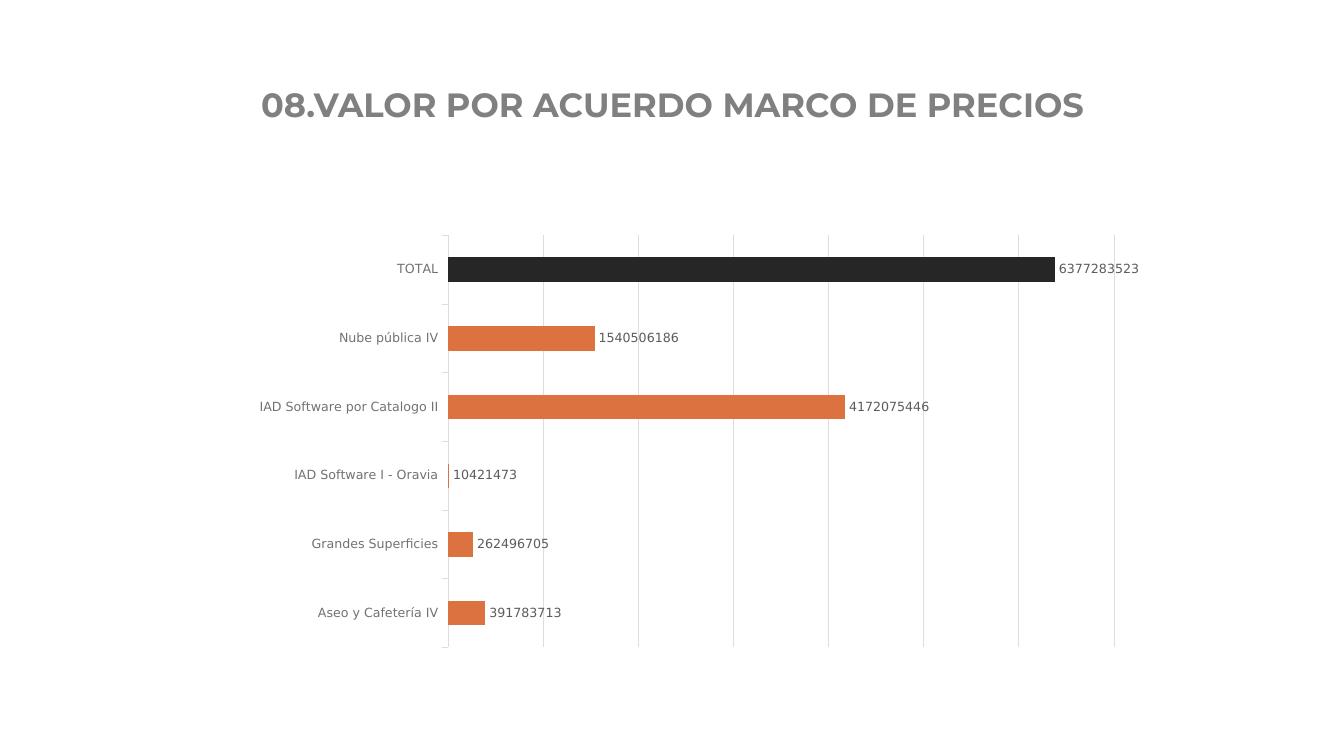
from lxml import etree
from pptx import Presentation
from pptx.chart.data import CategoryChartData
from pptx.dml.color import RGBColor
from pptx.enum import chart as ch, text
from pptx.oxml import ns
from pptx.util import Inches, Pt

TITLE_GRAY = RGBColor(0x80, 0x80, 0x80)
AXIS_GRAY = RGBColor(0x72, 0x72, 0x72)
LABEL_GRAY = RGBColor(0x5C, 0x5C, 0x5C)
GRID_GRAY = RGBColor(0xDE, 0xDE, 0xDE)
ORANGE = RGBColor(0xDC, 0x72, 0x40)
DARK = RGBColor(0x26, 0x26, 0x26)

AGREEMENTS = {
    "Aseo y Cafetería IV": 391783713,
    "Grandes Superficies": 262496705,
    "IAD Software I - Oravia": 10421473,
    "IAD Software por Catalogo II": 4172075446,
    "Nube pública IV": 1540506186,
    "TOTAL": 6377283523,
}


def set_font(font, name, size, color):
    font.name = name
    font.size = Pt(size)
    font.color.rgb = color


presentation = Presentation()
presentation.slide_width = Inches(13.33)
presentation.slide_height = Inches(7.5)
slide = presentation.slides.add_slide(presentation.slide_layouts[6])

# Title
title = slide.shapes.add_textbox(Inches(0.92), Inches(0.77), Inches(11.5), Inches(0.52))
title.text_frame.word_wrap = True
title.text_frame.vertical_anchor = text.MSO_ANCHOR.BOTTOM
paragraph = title.text_frame.paragraphs[0]
paragraph.text = "08.VALOR POR ACUERDO MARCO DE PRECIOS"
paragraph.alignment = text.PP_ALIGN.CENTER
paragraph.line_spacing = 0.9
set_font(paragraph.font, "Montserrat", 24, TITLE_GRAY)
paragraph.font.bold = True

# Bar chart
data = CategoryChartData(number_format="0")
data.categories = list(AGREEMENTS)
data.add_series("Series 1", list(AGREEMENTS.values()))
chart = slide.shapes.add_chart(
    ch.XL_CHART_TYPE.BAR_CLUSTERED,
    Inches(2.42), Inches(2.25), Inches(8.88), Inches(4.26), data,
).chart
chart.has_legend = False
chart.has_title = False
set_font(chart.font, "DejaVu Sans", 10, DARK)

category_axis = chart.category_axis
category_axis.major_tick_mark = ch.XL_TICK_MARK.OUTSIDE
category_axis.format.line.color.rgb = GRID_GRAY
category_axis.format.line.width = Pt(0.75)
set_font(category_axis.tick_labels.font, "DejaVu Sans", 9, AXIS_GRAY)

value_axis = chart.value_axis
value_axis.visible = False
value_axis.minimum_scale = 0
value_axis.maximum_scale = 7_000_000_000
value_axis.major_unit = 1_000_000_000
value_axis.has_major_gridlines = True
value_axis.major_gridlines.format.line.color.rgb = GRID_GRAY
value_axis.major_gridlines.format.line.width = Pt(0.75)

plot = chart.plots[0]
plot.gap_width = 182
plot.vary_by_categories = False
series = plot.series[0]
series.invert_if_negative = False
series.format.fill.solid()
series.format.fill.fore_color.rgb = ORANGE
total_fill = series.points[len(AGREEMENTS) - 1].format.fill
total_fill.solid()
total_fill.fore_color.rgb = DARK

labels = series.data_labels
labels.show_value = True
labels.position = ch.XL_LABEL_POSITION.OUTSIDE_END
set_font(labels.font, "DejaVu Sans", 9, LABEL_GRAY)

# Place the bars' area as fractions of the chart frame
plot_area = chart._chartSpace.chart.plotArea
for old_layout in plot_area.findall(ns.qn("c:layout")):
    plot_area.remove(old_layout)
layout = etree.Element(ns.qn("c:layout"))
plot_area.insert(0, layout)
manual = etree.SubElement(layout, ns.qn("c:manualLayout"))
for tag, value in [
    ("layoutTarget", "inner"), ("xMode", "edge"), ("yMode", "edge"),
    ("x", "0.228"), ("y", "0.02"), ("w", "0.744"), ("h", "0.96"),
]:
    etree.SubElement(manual, ns.qn(f"c:{tag}")).set("val", value)

presentation.save("out.pptx")
